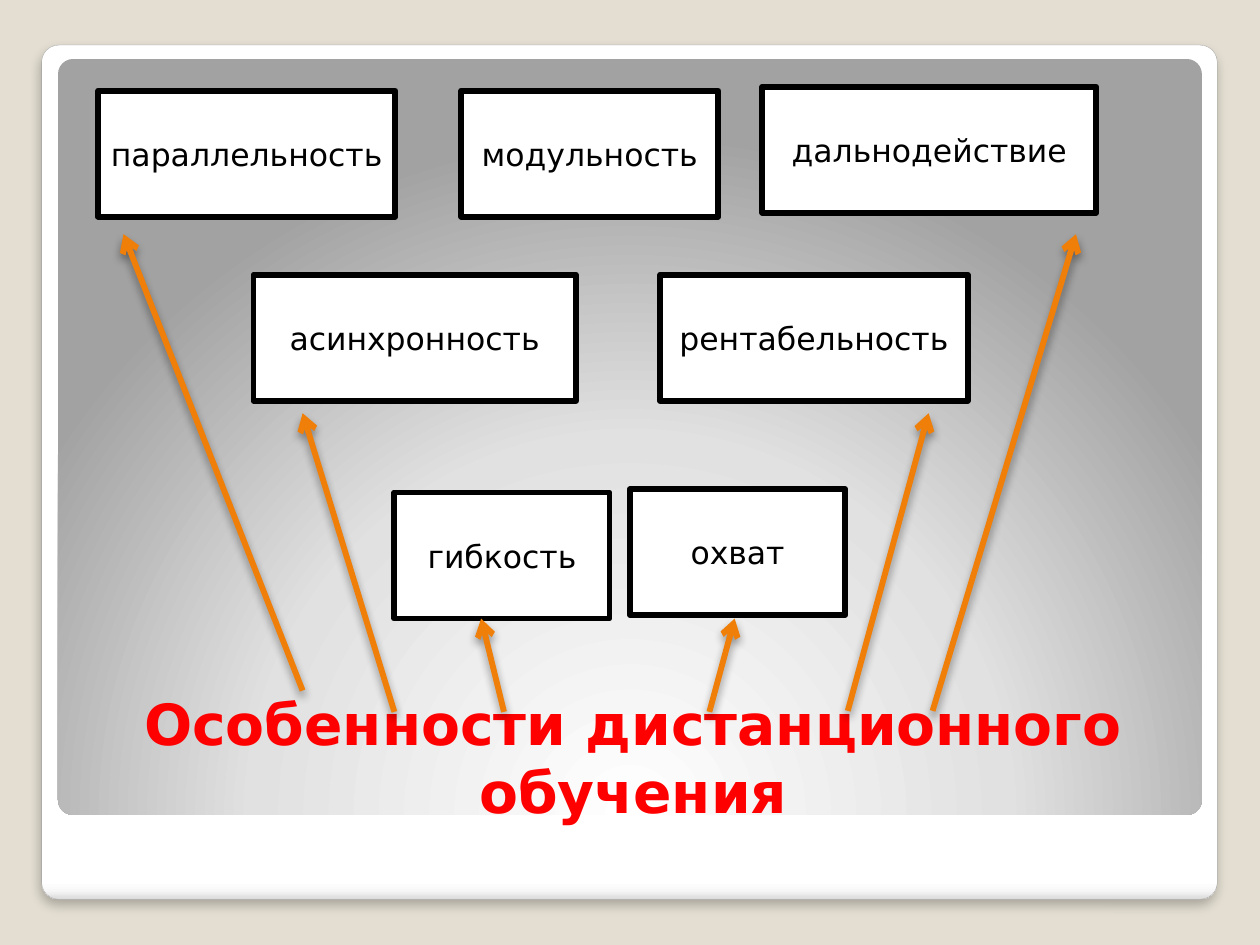
import dataclasses

import pptx
import pptx.dml.color
import pptx.enum.shapes
import pptx.enum.text
import pptx.oxml
import pptx.oxml.ns
import pptx.util

Cm = pptx.util.Cm
Pt = pptx.util.Pt
NAMESPACE = pptx.oxml.ns.nsdecls("a")


@dataclasses.dataclass(frozen=True)
class Theme:
    font: str = "DejaVu Sans"
    title_size: float = 32.4
    label_size: float = 18
    stroke: float = 3.35
    hairline: float = 0.16
    backdrop: str = "E3DED1"
    title: str = "FF0000"
    label: str = "000000"
    box: str = "FFFFFF"
    border: str = "000000"
    arrow: str = "F07F09"
    frame_line: str = "A4A4A4"
    shadow: str = "000000"
    frame_stops: tuple = ((0, "FFFFFF"), (98, "FFFFFF"), (99, "F7F7F7"), (100, "DADADA"))
    panel_stops: tuple = ((0, "FFFFFF"), (55, "E1E1E1"), (100, "A2A2A2"))


THEME = Theme()
DOWNWARD = '<a:lin ang="5400000" scaled="0"/>'
FROM_BELOW = ('<a:path path="circle">'
              '<a:fillToRect l="50000" t="175000" r="50000" b="-75000"/></a:path>')

# Text, left, top, width in cm
BOX_HEIGHT = 2.54
BOXES = [
    ("гибкость", 7.95, 9.93, 4.34),
    ("асинхронность", 5.11, 5.54, 6.5),
    ("охват", 12.7, 9.86, 4.34),
    ("рентабельность", 13.31, 5.54, 6.2),
    ("модульность", 9.3, 1.83, 5.18),
    ("параллельность", 1.98, 1.83, 5.99),
    ("дальнодействие", 15.37, 1.75, 6.73),
]
# Start x, start y, end x, end y in cm
ARROWS = [
    (6.1, 13.92, 2.49, 4.72),
    (7.95, 14.35, 6.1, 8.33),
    (10.16, 14.35, 9.7, 12.47),
    (14.3, 14.35, 14.81, 12.47),
    (17.09, 14.33, 18.72, 8.33),
    (18.8, 14.33, 21.69, 4.72),
]


def rgb(value):
    return pptx.dml.color.RGBColor.from_string(value)


def set_line(line, color, width):
    line.color.rgb = rgb(color)
    line.width = Pt(width)


def add_shadow(properties, opacity, blur, distance):
    """Append a shadow that falls straight down; blur and distance in points."""
    properties.append(pptx.oxml.parse_xml(
        f'<a:effectLst {NAMESPACE}><a:outerShdw blurRad="{Pt(blur)}" dist="{Pt(distance)}" '
        f'dir="5400000" algn="tl" rotWithShape="0"><a:srgbClr val="{THEME.shadow}">'
        f'<a:alpha val="{opacity * 1000}"/></a:srgbClr></a:outerShdw></a:effectLst>'))


def add_gradient_panel(page, left, top, width, height, stops, direction):
    panel = page.shapes.add_shape(pptx.enum.shapes.MSO_SHAPE.ROUNDED_RECTANGLE,
                                  Cm(left), Cm(top), Cm(width), Cm(height))
    panel.adjustments[0] = 0.02
    stop_list = "".join(f'<a:gs pos="{position * 1000}"><a:srgbClr val="{color}"/></a:gs>'
                        for position, color in stops)
    geometry = panel.element.spPr.find(pptx.oxml.ns.qn("a:prstGeom"))
    geometry.addnext(pptx.oxml.parse_xml(
        f'<a:gradFill {NAMESPACE} rotWithShape="1"><a:gsLst>{stop_list}</a:gsLst>'
        f'{direction}</a:gradFill>'))
    return panel


def add_background(page):
    page.background.fill.solid()
    page.background.fill.fore_color.rgb = rgb(THEME.backdrop)

    frame = add_gradient_panel(page, 0.84, 0.91, 23.7, 17.22, THEME.frame_stops, DOWNWARD)
    set_line(frame.line, THEME.frame_line, THEME.hairline)
    add_shadow(frame.element.spPr, 25, 6, 4)

    panel = add_gradient_panel(page, 1.17, 1.19, 23.06, 15.24, THEME.panel_stops, FROM_BELOW)
    panel.line.fill.background()
    panel.shadow.inherit = False


def write_text(shape, text, size, color, anchor, bold=False):
    frame = shape.text_frame
    frame.word_wrap = True
    frame.vertical_anchor = anchor
    para = frame.paragraphs[0]
    para.text = text
    para.alignment = pptx.enum.text.PP_ALIGN.CENTER
    para.font.name = THEME.font
    para.font.size = Pt(size)
    para.font.bold = bold
    para.font.color.rgb = rgb(color)


def add_title(page, text):
    title = page.shapes.add_textbox(Cm(1.4), Cm(13.84), Cm(22.73), Cm(2.92))
    write_text(title, text, THEME.title_size, THEME.title,
               pptx.enum.text.MSO_ANCHOR.BOTTOM, bold=True)


def add_box(page, text, left, top, width):
    box = page.shapes.add_shape(pptx.enum.shapes.MSO_SHAPE.RECTANGLE,
                                Cm(left), Cm(top), Cm(width), Cm(BOX_HEIGHT))
    box.shadow.inherit = False
    box.fill.solid()
    box.fill.fore_color.rgb = rgb(THEME.box)
    set_line(box.line, THEME.border, THEME.stroke)
    box.text_frame.margin_left = box.text_frame.margin_right = Cm(0.1)
    write_text(box, text, THEME.label_size, THEME.label, pptx.enum.text.MSO_ANCHOR.MIDDLE)


def add_arrow(page, *ends):
    arrow = page.shapes.add_connector(pptx.enum.shapes.MSO_CONNECTOR.STRAIGHT,
                                      *(Cm(value) for value in ends))
    set_line(arrow.line, THEME.arrow, THEME.stroke)
    properties = arrow.element.spPr
    properties.find(pptx.oxml.ns.qn("a:ln")).append(
        pptx.oxml.parse_xml(f'<a:tailEnd {NAMESPACE} type="arrow"/>'))
    add_shadow(properties, 40, 5.2, 3)


def main():
    deck = pptx.Presentation()
    deck.slide_width, deck.slide_height = Cm(25.4), Cm(19.05)
    page = deck.slides.add_slide(deck.slide_layouts[6])
    add_background(page)
    add_title(page, "Особенности дистанционного обучения")
    for box in BOXES:
        add_box(page, *box)
    for arrow in ARROWS:
        add_arrow(page, *arrow)
    deck.save("out.pptx")


if __name__ == "__main__":
    main()
